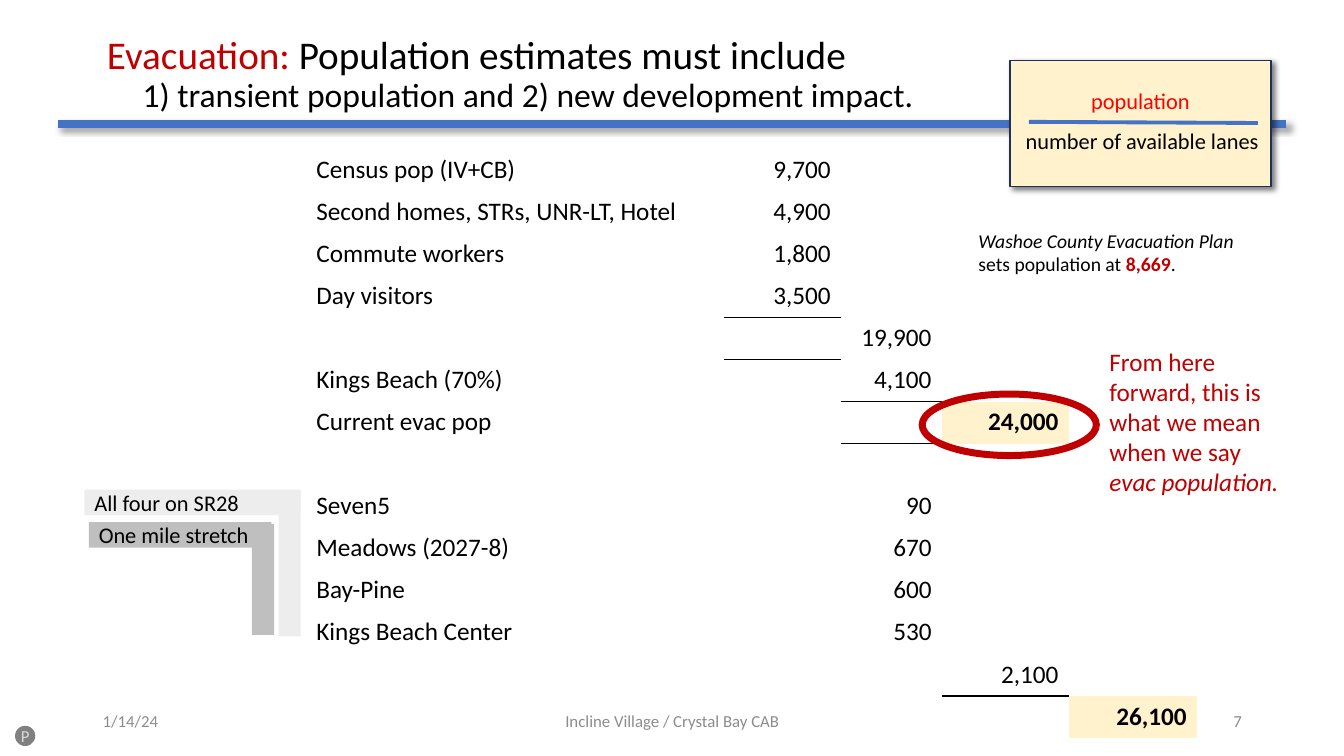
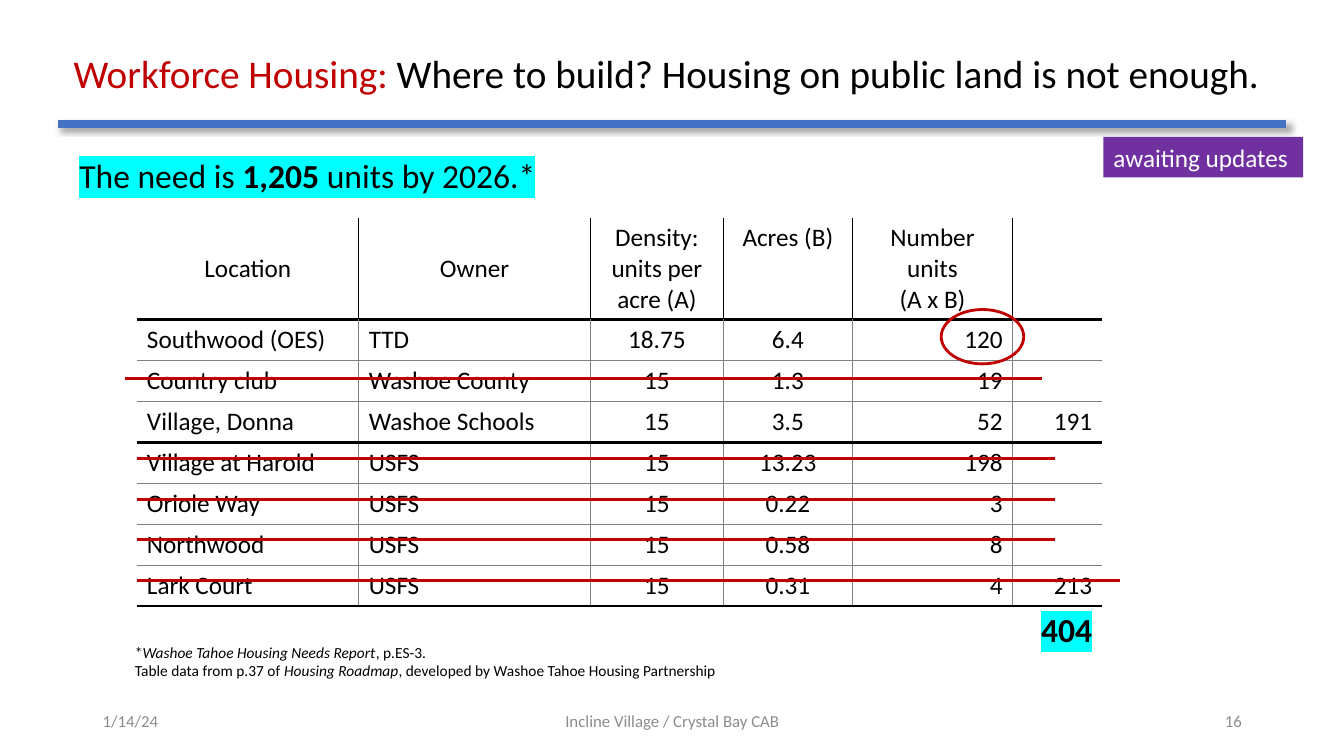
from dataclasses import dataclass
from typing import Any, Optional

from lxml.etree import SubElement
from pptx import Presentation
from pptx.dml.color import RGBColor
from pptx.enum.shapes import MSO_CONNECTOR, MSO_SHAPE
from pptx.enum.text import MSO_ANCHOR, MSO_AUTO_SIZE, PP_ALIGN
from pptx.oxml.ns import qn
from pptx.util import Cm, Pt

LEFT, MID, RIGHT = PP_ALIGN.LEFT, PP_ALIGN.CENTER, PP_ALIGN.RIGHT


@dataclass(frozen=True)
class Theme:
    font: str = "Calibri"
    ink: str = "000000"
    white: str = "FFFFFF"
    red: str = "C00000"
    alert: str = "FF0000"
    blue: str = "4472C4"
    navy: str = "1E3256"
    cream: str = "FFF2CC"
    pale: str = "EDEDED"
    silver: str = "BFBFBF"
    mist: str = "D9D9D9"
    grey: str = "808080"
    muted: str = "8C8C8C"
    purple: str = "7030A0"
    cyan: str = "00FFFF"
    title: float = 28
    large: float = 24
    body: float = 18
    label: float = 16
    note: float = 14
    foot: float = 12
    source: float = 11


T = Theme()


@dataclass(frozen=True)
class Box:
    x: float
    y: float
    w: float
    h: float

    def place(self) -> tuple:
        return Cm(self.x), Cm(self.y), Cm(self.w), Cm(self.h)


@dataclass(frozen=True)
class Run:
    text: str
    color: Optional[str] = None
    size: Optional[float] = None
    bold: bool = False
    italic: bool = False


@dataclass(frozen=True)
class Edge:
    side: str
    color: str = T.ink
    width: float = 1


@dataclass(frozen=True)
class Strike:
    x: float
    y: float
    end: float


# Text
def write(frame: Any, text: Any, *, size: float = T.body, color: str = T.ink,
          bold: bool = False, align: Any = LEFT, glow: str = "",
          space: Optional[float] = None) -> None:
    """Fill a frame from a string, or from a list of paragraphs of runs."""
    if isinstance(text, str):
        text = [[Run(line)] for line in text.split("\n")]
    for i, runs in enumerate(text):
        para = frame.paragraphs[0] if i == 0 else frame.add_paragraph()
        para.alignment = align
        if space:
            para.line_spacing = space
        for part in runs:
            run = para.add_run()
            run.text = part.text
            font = run.font
            font.name = T.font
            font.size = Pt(part.size or size)
            font.bold = bold or part.bold
            font.italic = part.italic
            font.color.rgb = RGBColor.from_string(part.color or color)
            if glow:
                props = run._r.get_or_add_rPr()
                mark = SubElement(props, qn("a:highlight"))
                SubElement(mark, qn("a:srgbClr"), val=glow)
                props.find(qn("a:solidFill")).addnext(mark)


def label(slide: Any, box: Box, text: Any, *, wrap: bool = True,
          anchor: Any = MSO_ANCHOR.TOP, **form: Any) -> None:
    frame = slide.shapes.add_textbox(*box.place()).text_frame
    frame.word_wrap = wrap
    frame.vertical_anchor = anchor
    write(frame, text, **form)


# Shapes and lines
def shade(props: Any, alpha: int) -> None:
    """Put a soft drop shadow in the effect list."""
    cast = SubElement(props.find(qn("a:effectLst")), qn("a:outerShdw"),
                      blurRad=str(Pt(4)), dist=str(Pt(3)), dir="2700000",
                      algn="tl", rotWithShape="0")
    tint = SubElement(cast, qn("a:srgbClr"), val=T.ink)
    SubElement(tint, qn("a:alpha"), val=str(alpha * 1000))


def shape(slide: Any, kind: Any, box: Box, text: str = "", *, fill: str = "",
          line: str = "", width: float = 1, shadow: int = 0,
          wrap: bool = True, pad: float = 0.25, **form: Any) -> None:
    item = slide.shapes.add_shape(kind, *box.place())
    item.shadow.inherit = False
    if fill:
        item.fill.solid()
        item.fill.fore_color.rgb = RGBColor.from_string(fill)
    else:
        item.fill.background()
    if line:
        item.line.color.rgb = RGBColor.from_string(line)
        item.line.width = Pt(width)
    else:
        item.line.fill.background()
    if shadow:
        shade(item._element.spPr, shadow)
    if text:
        frame = item.text_frame
        frame.word_wrap = wrap
        frame.vertical_anchor = MSO_ANCHOR.MIDDLE
        frame.margin_left = frame.margin_right = Cm(pad)
        frame.margin_top = frame.margin_bottom = 0
        write(frame, text, **form)


def rule(slide: Any, x: float, y: float, end: float, *, drop: float = 0,
         color: str = T.red, width: float = 2, shadow: int = 0) -> None:
    item = slide.shapes.add_connector(MSO_CONNECTOR.STRAIGHT, Cm(x), Cm(y),
                                      Cm(end), Cm(y + drop))
    item.line.color.rgb = RGBColor.from_string(color)
    item.line.width = Pt(width)
    props = item._element.spPr
    SubElement(props, qn("a:effectLst"))
    if shadow:
        shade(props, shadow)


# Tables
def grid(slide: Any, x: float, y: float, cols: list, rows: list) -> Any:
    frame = slide.shapes.add_table(len(rows), len(cols), Cm(x), Cm(y),
                                   Cm(sum(cols)), Cm(sum(rows)))
    table = frame.table
    table.first_row = table.horz_banding = False
    style = table._tbl.tblPr.find(qn("a:tableStyleId"))
    style.text = "{2D5ABB26-0587-4C30-8999-92F81FD0307C}"
    for col, w in zip(table.columns, cols):
        col.width = Cm(w)
    for row, h in zip(table.rows, rows):
        row.height = Cm(h)
    return table


def fill_cell(cell: Any, text: str, edges: list, *, fill: str = "",
              anchor: Any = MSO_ANCHOR.TOP, **form: Any) -> None:
    """Edges come in the order L, R, T, B."""
    props = cell._tc.get_or_add_tcPr()
    for edge in edges:
        line = SubElement(props, qn("a:ln" + edge.side),
                          w=str(Pt(edge.width)))
        solid = SubElement(line, qn("a:solidFill"))
        SubElement(solid, qn("a:srgbClr"), val=edge.color)
    if fill:
        cell.fill.solid()
        cell.fill.fore_color.rgb = RGBColor.from_string(fill)
    else:
        cell.fill.background()
    cell.vertical_anchor = anchor
    if text:
        write(cell.text_frame, text, **form)


# Shared frame: title, blue rule, footer
def start(deck: Any, box: Box, title: list, page: str) -> Any:
    slide = deck.slides.add_slide(deck.slide_layouts[5])
    head = slide.shapes.title
    head.left, head.top, head.width, head.height = box.place()
    frame = head.text_frame
    frame.auto_size = MSO_AUTO_SIZE.NONE
    frame.vertical_anchor = MSO_ANCHOR.MIDDLE
    write(frame, title, size=T.title, space=0.9)
    rule(slide, 1.45, 3.12, 32.41, color=T.blue, width=5.5, shadow=40)
    for x, w, text, align in ((2.34, 7.62, "1/14/24", LEFT),
                              (11.23, 11.43, "Incline Village / Crystal Bay CAB", MID),
                              (23.93, 7.62, page, RIGHT)):
        label(slide, Box(x, 17.65, w, 1.02), text, size=T.foot,
              color=T.muted, align=align, anchor=MSO_ANCHOR.MIDDLE)
    return slide


COUNTS = [
    ("Census pop (IV+CB)", 1, "9,700"),
    ("Second homes, STRs, UNR-LT, Hotel", 1, "4,900"),
    ("Commute workers", 1, "1,800"),
    ("Day visitors", 1, "3,500"),
    ("", 2, "19,900"),
    ("Kings Beach (70%)", 2, "4,100"),
    ("Current evac pop", 3, "24,000"),
    ("", 0, ""),
    ("Seven5", 2, "90"),
    ("Meadows (2027-8)", 2, "670"),
    ("Bay-Pine", 2, "600"),
    ("Kings Beach Center", 2, "530"),
    ("", 3, "2,100"),
    ("", 4, "26,100"),
]
SUMS = {(3, 1), (5, 2), (12, 3)}
TOTALS = ("24,000", "26,100")


def people(deck: Any) -> None:
    slide = start(deck, Box(2.44, 0.05, 29.21, 3.68), [
        [Run("Evacuation: ", T.red), Run("Population estimates must include")],
        [Run("1) transient population and 2) new development impact.",
             size=T.large)]], "7")
    second = slide.shapes.title.text_frame.paragraphs[1]
    second._p.get_or_add_pPr().set("marL", str(Cm(0.9)))

    # Population table
    table = grid(slide, 7.72, 3.76, [10.52, 2.95, 2.54, 3.2, 3.23],
                 [1.06] * len(COUNTS))
    for r, (name, col, count) in enumerate(COUNTS):
        for c in range(5):
            text = name if c == 0 else count if c == col else ""
            edges = [Edge("T")] if (r - 1, c) in SUMS else []
            edges += [Edge("B")] if (r, c) in SUMS else []
            total = text in TOTALS
            fill_cell(table.cell(r, c), text, edges, bold=total,
                      fill=T.cream if total else "",
                      align=RIGHT if c else LEFT)

    # Grey brackets
    for box, fill, text in (
            (Box(2.13, 12.34, 5.44, 0.64), T.pale, "All four on SR28"),
            (Box(7.02, 12.36, 0.56, 3.68), T.pale, ""),
            (Box(6.35, 13.21, 0.56, 2.79), T.silver, ""),
            (Box(2.24, 13.16, 4.6, 0.64), T.silver, "One mile stretch")):
        shape(slide, MSO_SHAPE.RECTANGLE, box, text, fill=fill, size=T.label)

    # Remarks
    label(slide, Box(24.41, 5.64, 7.24, 1.45), [[
        Run("Washoe County Evacuation Plan ", italic=True),
        Run("sets population at "), Run("8,669", T.red, bold=True),
        Run(".")]], size=T.note)
    shape(slide, MSO_SHAPE.OVAL, Box(23.24, 9.93, 4.39, 1.55),
          line=T.red, width=5)
    label(slide, Box(27.71, 8.59, 5.08, 4.11), [[
        Run("From here forward, this is what we mean when we say "),
        Run("evac population.", italic=True)]], color=T.red)
    shape(slide, MSO_SHAPE.OVAL, Box(0.38, 18.29, 0.51, 0.51), "P",
          fill=T.grey, color=T.mist, size=T.foot, align=MID, pad=0,
          wrap=False)

    # Fraction card
    shape(slide, MSO_SHAPE.RECTANGLE, Box(25.45, 1.52, 6.58, 3.18),
          fill=T.cream, line=T.navy, shadow=49)
    label(slide, Box(27.25, 2.08, 3.1, 0.97), "population", wrap=False,
          size=T.label, color=T.alert)
    rule(slide, 25.93, 3.07, 31.7, drop=0.03, color=T.blue, width=2.75)
    label(slide, Box(25.6, 3.07, 6.45, 0.94), "number of available lanes",
          wrap=False, size=T.label)


SITES = [
    ("Location", "Owner", "Density: units per acre (A)", "Acres (B)",
     "Number units\n(A x B)", ""),
    ("Southwood (OES)", "TTD", "18.75", "6.4", "120", ""),
    ("Country club", "Washoe County", "15", "1.3", "19", ""),
    ("Village, Donna", "Washoe Schools", "15", "3.5", "52", "191"),
    ("Village at Harold", "USFS", "15", "13.23", "198", ""),
    ("Oriole Way", "USFS", "15", "0.22", "3", ""),
    ("Northwood", "USFS", "15", "0.58", "8", ""),
    ("Lark Court", "USFS", "15", "0.31", "4", "213"),
    ("", "", "", "", "", "404"),
]
ALIGNS = (LEFT, LEFT, MID, MID, RIGHT, RIGHT)
HEAVY = (1, 4, 8)


def borders(r: int, c: int) -> list:
    """Inner lines only: thick between groups, thin elsewhere."""
    last = len(SITES) - 1
    edges = []
    if r < last:
        tint = T.grey if r else T.ink
        edges += [Edge("L", tint)] if c else []
        edges += [Edge("R", tint)] if c < 5 else []
    for side, at in (("T", r), ("B", r + 1)):
        if 0 < at <= last:
            edges.append(Edge(side, T.ink, 2.25) if at in HEAVY
                         else Edge(side, T.grey))
    return edges


def homes(deck: Any) -> None:
    slide = start(deck, Box(1.6, 0.08, 31.7, 3.68), [[
        Run("Workforce Housing: ", T.red),
        Run("Where to build? Housing on public land is not enough.")]], "16")

    # Site table
    table = grid(slide, 3.45, 5.49, [5.59, 5.84, 3.35, 3.25, 4.04, 2.26],
                 [2.57] + [1.03] * 7 + [1.27])
    for r, row in enumerate(SITES):
        for c, text in enumerate(row):
            total = r == len(SITES) - 1
            fill_cell(table.cell(r, c), text, borders(r, c),
                      align=ALIGNS[c] if r else MID, bold=total,
                      size=T.large if total else T.body,
                      glow=T.cyan if total else "",
                      anchor=MSO_ANCHOR.MIDDLE if r == 0 and c < 2
                      else MSO_ANCHOR.TOP)

    # Need and sources
    label(slide, Box(1.75, 3.78, 12.95, 1.27), [[
        Run("The need is "), Run("1,205", bold=True),
        Run(" units by 2026.*")]], size=T.large, glow=T.cyan)
    label(slide, Box(3.15, 16.08, 15.34, 1.19), [
        [Run("*"), Run("Washoe Tahoe Housing Needs Report", italic=True),
         Run(", p.ES-3.")],
        [Run("Table data from p.37 of "), Run("Housing Roadmap", italic=True),
         Run(", developed by Washoe Tahoe Housing Partnership")]],
        size=T.source, wrap=False)

    # Strikes and ring
    marks = [Strike(3.45, 11.56 + 1.02 * i, 28.22 if i == 3 else 26.59)
             for i in range(4)]
    for mark in [Strike(3.15, 9.53, 26.26)] + marks:
        rule(slide, mark.x, mark.y, mark.end)
    shape(slide, MSO_SHAPE.OVAL, Box(23.72, 7.8, 2.08, 1.37),
          line=T.red, width=2)
    shape(slide, MSO_SHAPE.RECTANGLE, Box(27.81, 3.45, 5.03, 1.02),
          "awaiting updates", fill=T.purple, color=T.white, wrap=False)


def main() -> None:
    deck = Presentation()
    deck.slide_width, deck.slide_height = Cm(33.87), Cm(19.05)
    people(deck)
    homes(deck)
    deck.save("out.pptx")


if __name__ == "__main__":
    main()
